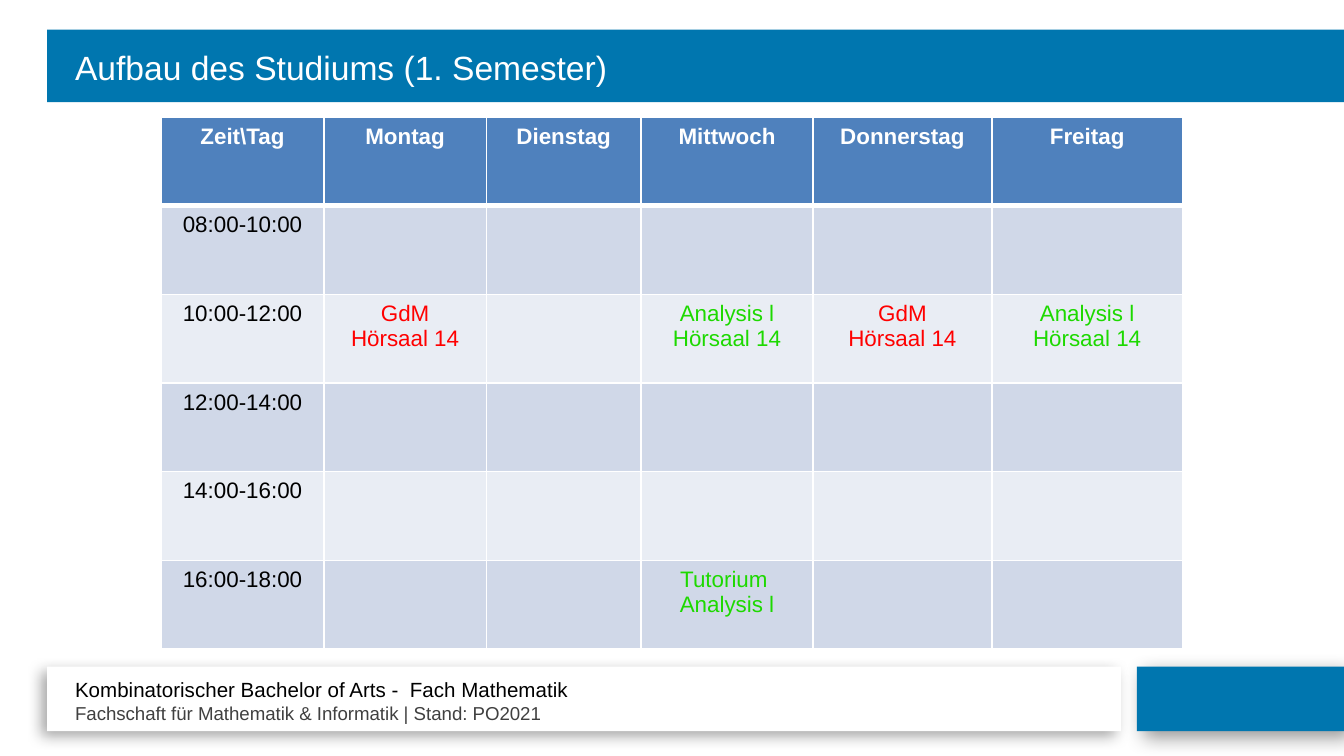
from dataclasses import dataclass

from lxml import etree
from pptx import Presentation
from pptx.dml.color import RGBColor
from pptx.enum import shapes, text
from pptx.oxml import ns
from pptx.util import Inches, Pt


@dataclass(frozen=True)
class Theme:
    font: str = "Arial"
    white: str = "FFFFFF"
    black: str = "000000"
    grey: str = "404040"
    accent: str = "0076AF"
    header: str = "4F81BD"
    bands: tuple = ("D0D8E8", "E9EDF4")
    red: str = "FF0000"
    green: str = "1DD900"
    title_size: float = 18
    table_size: float = 12
    footer_size: float = 11
    note_size: float = 10


THEME = Theme()
DAYS = ["Zeit\\Tag", "Montag", "Dienstag", "Mittwoch", "Donnerstag", "Freitag"]
TIMES = [f"{hour:02}:00-{hour + 2:02}:00" for hour in range(8, 18, 2)]
COLUMN_WIDTHS = [1.21, 1.21, 1.15, 1.28, 1.33, 1.42]
GDM = (["GdM", "Hörsaal 14"], THEME.red)
ANALYSIS = (["Analysis l", "Hörsaal 14"], THEME.green)
TUTORIAL = (["Tutorium ", "Analysis l"], THEME.green)
COURSES = {(2, 1): GDM, (2, 3): ANALYSIS, (2, 4): GDM, (2, 5): ANALYSIS, (5, 3): TUTORIAL}


def add_run(paragraph, words, size, color, bold=False):
    run = paragraph.add_run()
    run.text = words
    run.font.name = THEME.font
    run.font.size = Pt(size)
    run.font.bold = bold
    run.font.color.rgb = RGBColor.from_string(color)


def add_lines(frame, lines, align=text.PP_ALIGN.LEFT):
    """Write one paragraph for each (words, size, color, bold) line."""
    for index, line in enumerate(lines):
        paragraph = frame.add_paragraph() if index else frame.paragraphs[0]
        paragraph.alignment = align
        add_run(paragraph, *line)


def add_text(slide, left, top, width, height, lines, anchor=text.MSO_ANCHOR.TOP):
    box = slide.shapes.add_textbox(Inches(left), Inches(top), Inches(width), Inches(height))
    box.text_frame.word_wrap = True
    box.text_frame.vertical_anchor = anchor
    add_lines(box.text_frame, lines)


def add_panel(slide, left, top, width, height, fill):
    panel = slide.shapes.add_shape(
        shapes.MSO_SHAPE.RECTANGLE, Inches(left), Inches(top), Inches(width), Inches(height))
    panel.shadow.inherit = False
    panel.fill.solid()
    panel.fill.fore_color.rgb = RGBColor.from_string(fill)
    panel.line.fill.background()
    return panel


def add_shadow(shape, blur, distance, angle, opacity):
    effects = shape.element.spPr.find(ns.qn("a:effectLst"))
    shadow = etree.SubElement(
        effects, ns.qn("a:outerShdw"), blurRad=str(Pt(blur)), dist=str(Pt(distance)),
        dir=str(angle * 60000), algn="ctr", rotWithShape="0")
    color = etree.SubElement(shadow, ns.qn("a:srgbClr"), val=THEME.black)
    etree.SubElement(color, ns.qn("a:alpha"), val=str(opacity * 1000))


def set_borders(cell, top, bottom):
    """Draw white borders; they must stand before the cell's fill."""
    properties = cell._tc.get_or_add_tcPr()
    for index, (side, width) in enumerate(
            [("lnL", 1), ("lnR", 1), ("lnT", top), ("lnB", bottom)]):
        line = etree.Element(ns.qn(f"a:{side}"), w=str(Pt(width)))
        fill = etree.SubElement(line, ns.qn("a:solidFill"))
        etree.SubElement(fill, ns.qn("a:srgbClr"), val=THEME.white)
        properties.insert(index, line)


def add_title_bar(slide, left, top, width, height):
    add_panel(slide, left, top, width, height, THEME.accent)
    title = ("Aufbau des Studiums (1. Semester)", THEME.title_size, THEME.white)
    add_text(slide, left + 0.11, top + 0.01, 8.41, height, [title], text.MSO_ANCHOR.MIDDLE)


def add_footer(slide, left, top, width, height):
    accent_width, gap = 1.54, 0.12
    panel_width = width - accent_width - gap
    panel = add_panel(slide, left, top, panel_width, height, THEME.white)
    add_shadow(panel, 7.5, 4, 145, 34)
    accent = add_panel(
        slide, left + panel_width + gap, top, accent_width, height, THEME.accent)
    add_shadow(accent, 10.8, 5, 40, 42)
    add_text(slide, left + 0.11, top + 0.03, 5.98, height, [
        ("Kombinatorischer Bachelor of Arts -  Fach Mathematik",
         THEME.footer_size, THEME.black),
        ("Fachschaft für Mathematik & Informatik | Stand: PO2021",
         THEME.note_size, THEME.grey),
    ])


def cell_content(row, column):
    """Return the lines of a timetable cell and their color."""
    if row == 0:
        return [DAYS[column]], THEME.white
    if column == 0:
        return [TIMES[row - 1]], THEME.black
    return COURSES.get((row, column), ([], THEME.black))


def add_timetable(slide, left, top, width, height):
    row_count = len(TIMES) + 1
    table = slide.shapes.add_table(
        row_count, len(DAYS), Inches(left), Inches(top), Inches(width), Inches(height)).table
    for column, column_width in zip(table.columns, COLUMN_WIDTHS):
        column.width = Inches(column_width)
    for row in range(row_count):
        fill = THEME.bands[(row - 1) % 2] if row else THEME.header
        for column in range(len(DAYS)):
            cell = table.cell(row, column)
            cell.fill.solid()
            cell.fill.fore_color.rgb = RGBColor.from_string(fill)
            set_borders(cell, 3 if row == 1 else 1, 3 if row == 0 else 1)
            words, color = cell_content(row, column)
            add_lines(cell.text_frame,
                      [(line, THEME.table_size, color, row == 0) for line in words],
                      text.PP_ALIGN.CENTER)


def main():
    presentation = Presentation()
    presentation.slide_width = Inches(10)
    presentation.slide_height = presentation.slide_width * 9 // 16
    slide = presentation.slides.add_slide(presentation.slide_layouts[6])
    add_footer(slide, 0.35, 4.96, 9.65, 0.48)
    add_title_bar(slide, 0.35, 0.22, 9.65, 0.54)
    add_timetable(slide, 1.2, 0.87, 7.6, 3.96)
    presentation.save("out.pptx")


if __name__ == "__main__":
    main()
